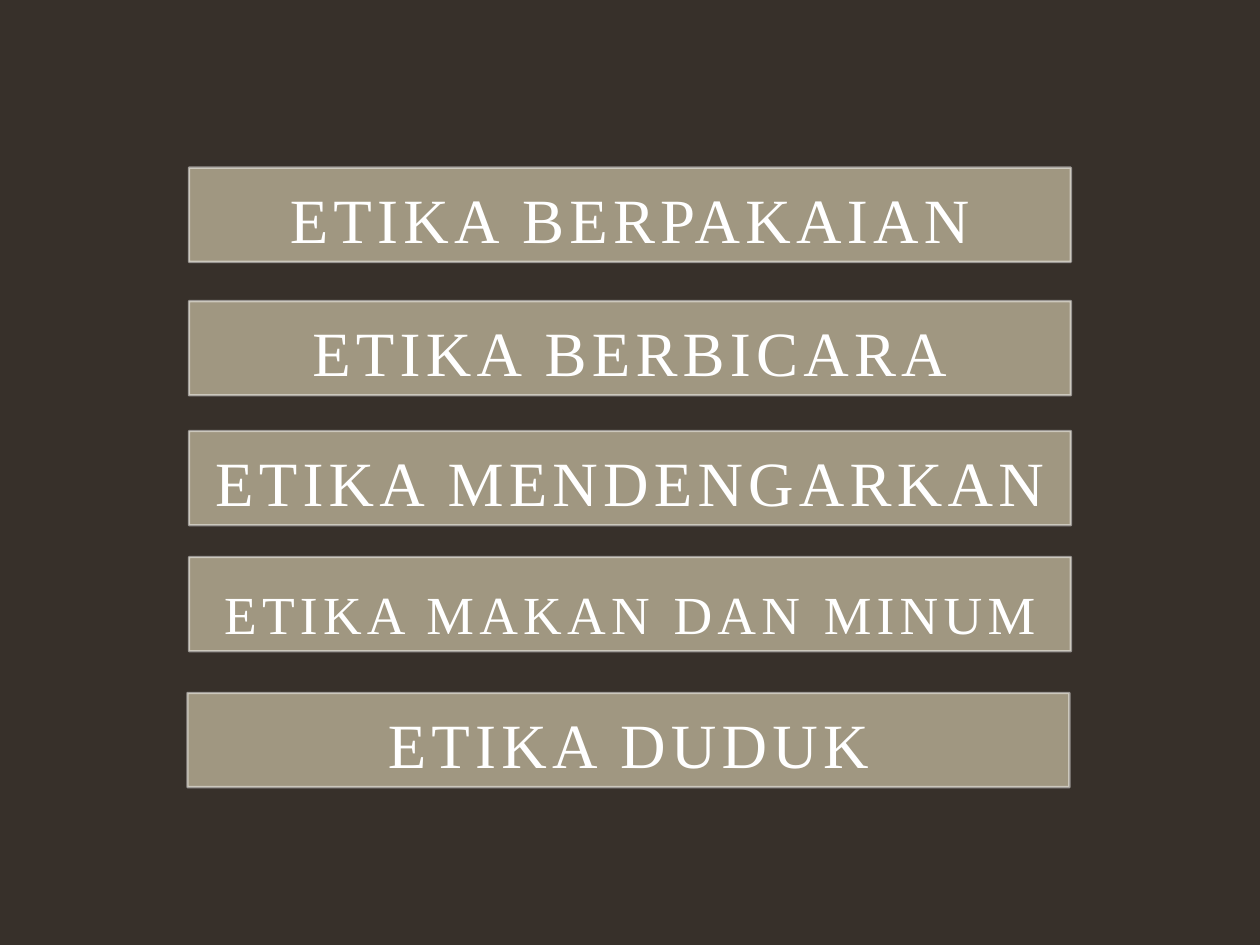
from dataclasses import dataclass

from lxml.etree import SubElement
from pptx import Presentation
from pptx.dml.color import RGBColor
from pptx.enum.shapes import MSO_SHAPE as Preset
from pptx.enum.text import MSO_ANCHOR as Anchor, PP_ALIGN as Align
from pptx.oxml.ns import qn
from pptx.shapes.autoshape import Shape
from pptx.slide import Slide
from pptx.util import Cm, Pt


@dataclass(frozen=True)
class Theme:
    background: RGBColor = RGBColor(0x37, 0x30, 0x2A)
    banner: RGBColor = RGBColor(0xA0, 0x97, 0x81)
    border: RGBColor = RGBColor(0xF9, 0xF9, 0xF9)
    text: RGBColor = RGBColor(0xFF, 0xFF, 0xFF)
    font: str = "Times New Roman"
    large: float = 36
    small: float = 30.6
    letter_spacing: float = 3
    border_width: float = 1.35
    border_opacity: int = 50


THEME = Theme()
BANNER_WIDTH, BANNER_HEIGHT = 17.78, 1.9


@dataclass(frozen=True)
class Banner:
    """One topic; lengths are in centimetres."""
    text: str
    top: float
    left: float = 3.81
    size: float = THEME.large


BANNERS = (
    Banner("ETIKA BERPAKAIAN", 3.38),
    Banner("ETIKA BERBICARA", 6.07),
    Banner("ETIKA MENDENGARKAN", 8.69),
    Banner("ETIKA MAKAN DAN MINUM", 11.23, size=THEME.small),
    Banner("ETIKA DUDUK", 13.97, left=3.78),
)


def write_text(shape: Shape, text: str, *, size: float, color: RGBColor = THEME.text,
               align: Align = Align.CENTER, anchor: Anchor = Anchor.BOTTOM) -> None:
    frame = shape.text_frame
    frame.word_wrap = True
    frame.vertical_anchor = anchor
    paragraph = frame.paragraphs[0]
    paragraph.alignment = align
    run = paragraph.add_run()
    run.text = text
    run.font.name = THEME.font
    run.font.size = Pt(size)
    run.font.color.rgb = color
    run._r.get_or_add_rPr().set("spc", str(round(THEME.letter_spacing * 100)))


def draw_border(shape: Shape) -> None:
    """Give the shape its half-transparent outline."""
    shape.line.color.rgb = THEME.border
    shape.line.width = Pt(THEME.border_width)
    color = shape.line._ln.find(".//" + qn("a:srgbClr"))
    SubElement(color, qn("a:alpha"), val=str(THEME.border_opacity * 1000))


def draw_banner(slide: Slide, banner: Banner) -> None:
    shape = slide.shapes.add_shape(Preset.RECTANGLE, Cm(banner.left), Cm(banner.top),
                                   Cm(BANNER_WIDTH), Cm(BANNER_HEIGHT))
    shape.shadow.inherit = False
    shape.fill.solid()
    shape.fill.fore_color.rgb = THEME.banner
    draw_border(shape)
    write_text(shape, banner.text, size=banner.size)


def main() -> None:
    presentation = Presentation()
    presentation.slide_width = Cm(25.4)
    presentation.slide_height = Cm(19.05)
    slide = presentation.slides.add_slide(presentation.slide_layouts[6])
    background = slide.background.fill
    background.solid()
    background.fore_color.rgb = THEME.background
    for banner in BANNERS:
        draw_banner(slide, banner)
    presentation.save("out.pptx")


if __name__ == "__main__":
    main()
